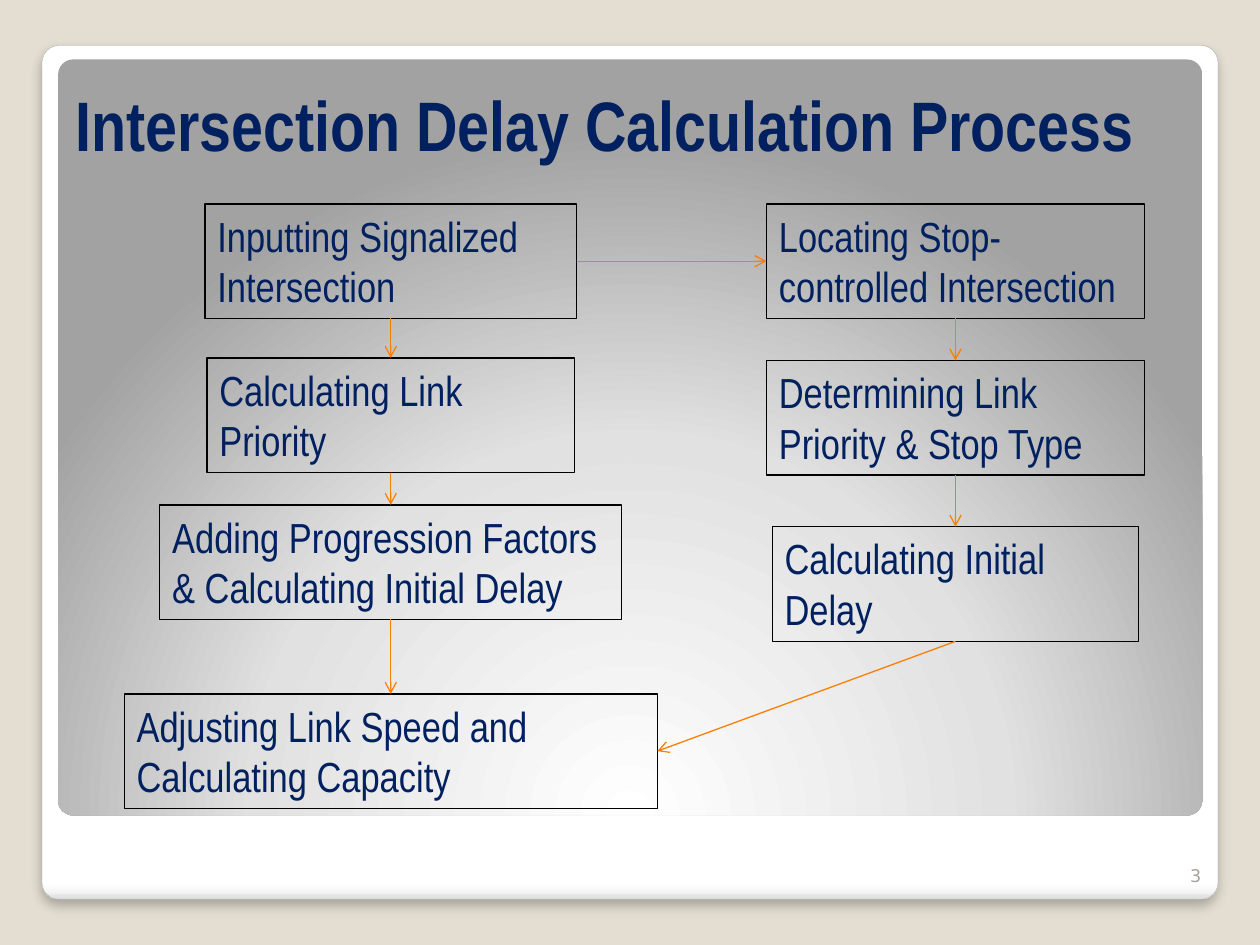
from itertools import pairwise

from pptx import Presentation
from pptx.dml.color import RGBColor
from pptx.enum.shapes import MSO_CONNECTOR, MSO_SHAPE
from pptx.enum.text import MSO_ANCHOR, MSO_AUTO_SIZE, PP_ALIGN
from pptx.oxml import parse_xml
from pptx.oxml.ns import nsdecls, qn
from pptx.util import Pt

SAND = RGBColor(0xE3, 0xDE, 0xD1)
NAVY = RGBColor(0x00, 0x20, 0x60)
BLACK = RGBColor(0x00, 0x00, 0x00)
ORANGE = RGBColor(0xF9, 0x7F, 0x00)
EDGE = RGBColor(0xA4, 0xA4, 0xA4)
MUTED = RGBColor(0xA8, 0xA4, 0x9B)
WHITE = RGBColor(0xFF, 0xFF, 0xFF)
PALE = RGBColor(0xF7, 0xF7, 0xF7)
SILVER = RGBColor(0xDA, 0xDA, 0xDA)
LIGHT = RGBColor(0xE1, 0xE1, 0xE1)
GRAY = RGBColor(0xA2, 0xA2, 0xA2)

FONT = "Arial Narrow"
TOP, LEFT, BOTTOM, RIGHT = range(4)
BOX_H = 65.5

# Each step: top and width within the chart, then its words
SIGNALS = [
    (0, 212.4, "Inputting Signalized Intersection"),
    (88, 210, "Calculating Link Priority"),
    (172, 264, "Adding Progression Factors & Calculating Initial Delay"),
    (280, 304.6, "Adjusting Link Speed and Calculating Capacity"),
]
STOPS = [
    (0, 216, "Locating Stop-controlled Intersection"),
    (89.5, 216, "Determining Link Priority & Stop Type"),
    (184.5, 209.5, "Calculating Initial Delay"),
]


def shade(shape, stops, course):
    """Give a gradient of (percent, colour) stops along a course."""
    shape.fill.gradient()
    old = shape._element.spPr.find(qn("a:gradFill"))
    marks = "".join(
        f'<a:gs pos="{at * 1000}"><a:srgbClr val="{color}"/></a:gs>'
        for at, color in stops)
    new = parse_xml(f'<a:gradFill {nsdecls("a")} rotWithShape="1">'
                    f'<a:gsLst>{marks}</a:gsLst>{course}</a:gradFill>')
    old.getparent().replace(old, new)


def add_panel(slide, x, y, w, h):
    panel = slide.shapes.add_shape(
        MSO_SHAPE.ROUNDED_RECTANGLE, Pt(x), Pt(y), Pt(w), Pt(h))
    panel.adjustments[0] = 0.02
    panel.shadow.inherit = False
    panel.line.fill.background()
    return panel


def add_frame(slide, x, y, w, h):
    card = add_panel(slide, x, y, w, h)
    shade(card, [(0, WHITE), (98, WHITE), (99, PALE), (100, SILVER)],
          '<a:lin ang="5400000" scaled="0"/>')
    card.line.color.rgb = EDGE
    card.line.width = Pt(0.16)
    card._element.spPr.find(qn("a:effectLst")).append(parse_xml(
        f'<a:outerShdw {nsdecls("a")} blurRad="{Pt(6)}" dist="{Pt(4)}" '
        'dir="5400000" algn="tl" rotWithShape="0"><a:srgbClr val="000000">'
        '<a:alpha val="25000"/></a:srgbClr></a:outerShdw>'))
    inner = add_panel(slide, x + 9.2, y + 8, w - 18.2, 432)
    shade(inner, [(0, WHITE), (55, LIGHT), (100, GRAY)],
          '<a:path path="circle"><a:fillToRect l="50000" t="175000" '
          'r="50000" b="-75000"/></a:path>')


def set_title(slide, x, y, w, h):
    title = slide.shapes.title
    title.left, title.top, title.width, title.height = map(Pt, (x, y, w, h))
    frame = title.text_frame
    frame.text = "Intersection Delay Calculation Process"
    frame.auto_size = MSO_AUTO_SIZE.NONE
    frame.vertical_anchor = MSO_ANCHOR.BOTTOM
    line = frame.paragraphs[0]
    line.alignment = PP_ALIGN.LEFT
    line.font.name, line.font.size, line.font.bold = FONT, Pt(40), True
    line.font.color.rgb = NAVY
    # Keep the title above the panels
    slide.shapes._spTree.append(title._element)


def add_step(slide, mid, y, w, text):
    box = slide.shapes.add_shape(
        MSO_SHAPE.RECTANGLE, Pt(mid - w / 2), Pt(y), Pt(w), Pt(BOX_H))
    box.shadow.inherit = False
    box.fill.background()
    box.line.color.rgb = BLACK
    box.line.width = Pt(0.75)
    frame = box.text_frame
    frame.text = text
    frame.word_wrap = True
    frame.vertical_anchor = MSO_ANCHOR.TOP
    line = frame.paragraphs[0]
    line.alignment = PP_ALIGN.LEFT
    line.font.name, line.font.size = FONT, Pt(24)
    line.font.color.rgb = NAVY
    return box


def add_arrow(slide, start, out, end, into):
    """Join two steps from side to side."""
    arrow = slide.shapes.add_connector(MSO_CONNECTOR.STRAIGHT, 0, 0, 0, 0)
    arrow.begin_connect(start, out)
    arrow.end_connect(end, into)
    arrow.line.color.rgb = ORANGE
    arrow.line.width = Pt(0.75)
    arrow.line._get_or_add_ln().append(
        parse_xml(f'<a:tailEnd {nsdecls("a")} type="arrow"/>'))
    arrow._element.spPr.append(parse_xml(f'<a:effectLst {nsdecls("a")}/>'))


def add_column(slide, mid, y, steps):
    boxes = [add_step(slide, mid, y + top, w, text) for top, w, text in steps]
    for upper, lower in pairwise(boxes):
        add_arrow(slide, upper, BOTTOM, lower, TOP)
    return boxes


def add_chart(slide, x, y, w):
    half = SIGNALS[-1][1] / 2
    left = add_column(slide, x + half, y, SIGNALS)
    right = add_column(slide, x + w - STOPS[0][1] / 2, y, STOPS)
    add_arrow(slide, left[0], RIGHT, right[0], LEFT)
    add_arrow(slide, right[-1], BOTTOM, left[-1], RIGHT)


def add_number(slide, x, y, w, h):
    box = slide.shapes.add_textbox(Pt(x), Pt(y), Pt(w), Pt(h))
    frame = box.text_frame
    frame.text = "3"
    frame.word_wrap = True
    frame.vertical_anchor = MSO_ANCHOR.BOTTOM
    line = frame.paragraphs[0]
    line.alignment = PP_ALIGN.RIGHT
    line.font.name, line.font.size = "DejaVu Sans", Pt(10)
    line.font.color.rgb = MUTED


def main():
    deck = Presentation()
    deck.slide_width, deck.slide_height = Pt(720), Pt(540)
    slide = deck.slides.add_slide(deck.slide_layouts[5])
    slide.background.fill.solid()
    slide.background.fill.fore_color.rgb = SAND
    add_frame(slide, 24, 26, 672, 488)
    set_title(slide, 36, 42, 666, 56)
    add_chart(slide, 71, 116.5, 583)
    add_number(slide, 657.5, 481, 36, 29)
    deck.save("out.pptx")


if __name__ == "__main__":
    main()
